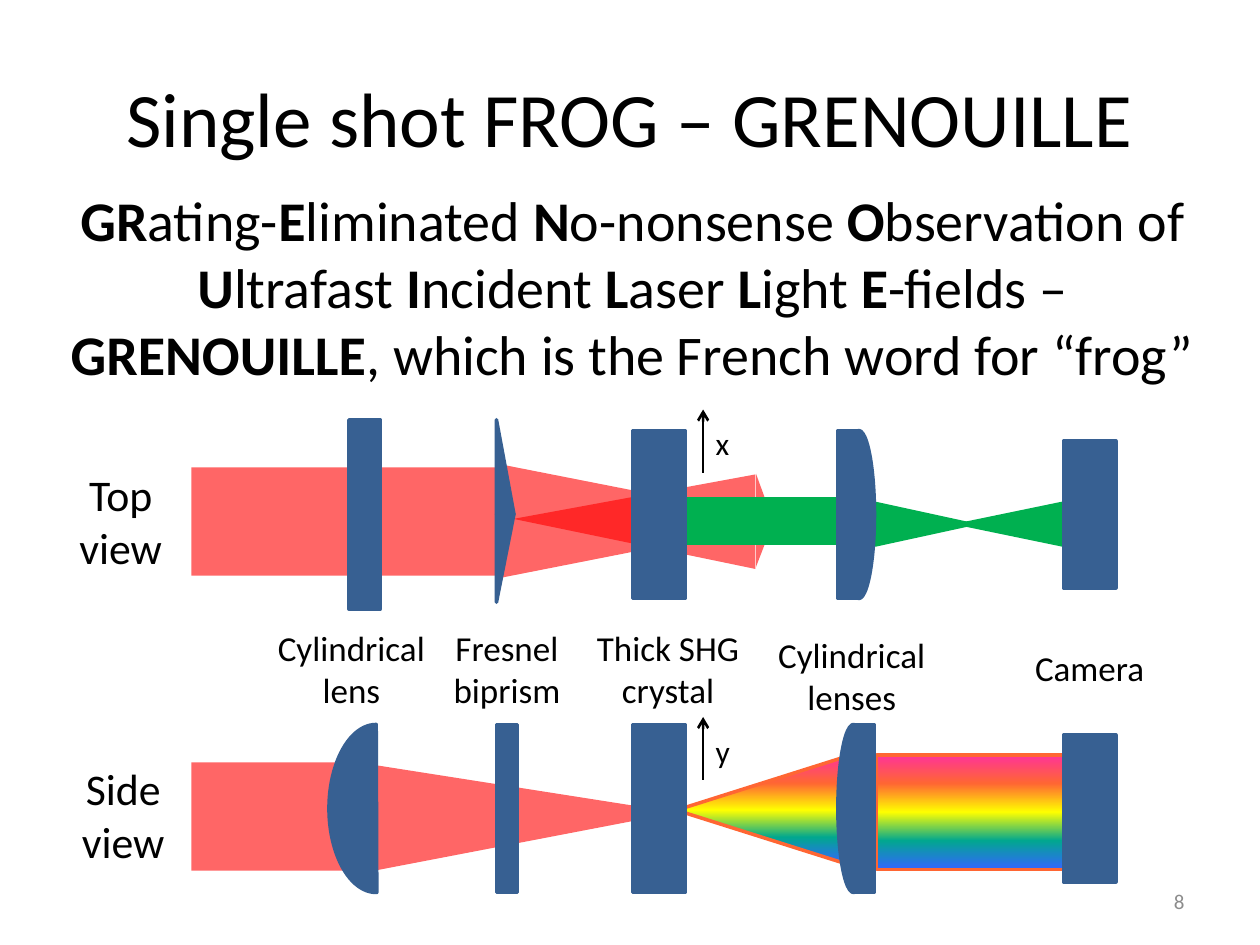
import pptx
import pptx.dml.color
import pptx.enum.shapes
import pptx.enum.text
import pptx.oxml
import pptx.oxml.ns
import pptx.util
from lxml import etree

Pt = pptx.util.Pt
RGBColor = pptx.dml.color.RGBColor
Shape = pptx.enum.shapes.MSO_SHAPE
Align = pptx.enum.text.PP_ALIGN
Anchor = pptx.enum.text.MSO_ANCHOR
qn = pptx.oxml.ns.qn

RED = RGBColor(0xFF, 0x00, 0x00)
GREEN = RGBColor(0x00, 0xB0, 0x50)
STEEL = RGBColor(0x37, 0x60, 0x92)
ORANGE = RGBColor(0xFF, 0x66, 0x33)
BLACK = RGBColor(0x00, 0x00, 0x00)
GRAY = RGBColor(0x8C, 0x8C, 0x8C)
SPECTRUM = (RGBColor(0xFF, 0x33, 0x99), ORANGE, RGBColor(0xFF, 0xFF, 0x00),
            RGBColor(0x01, 0xA7, 0x8F), RGBColor(0x33, 0x66, 0xFF))

TOP, SIDE = 246, 414          # upper edge of the crystal in each view
OPTIC_HEIGHT = 96
BEAM_LEFT, PRISM_X, CRYSTAL_X, LENS_X, CAMERA_X = 109.4, 283.7, 361.5, 478.8, 607.7
CRYSTAL_WIDTH = CAMERA_WIDTH = 30
LABEL_Y = 354.2

MEANING = (("GR", "ating-"), ("E", "liminated "), ("N", "o-nonsense "),
           ("O", "bservation of "), ("U", "ltrafast "), ("I", "ncident "),
           ("L", "aser "), ("L", "ight "), ("E", "-fields – "),
           ("GRENOUILLE", ", which is the French word for “frog”"))


def add_solid(page, kind, frame, color, outline=None, turn=0, adjust=(), flip=False):
    shape = page.shapes.add_shape(kind, *map(Pt, frame))
    shape.shadow.inherit = False
    shape.rotation = turn
    for index, value in enumerate(adjust):
        shape.adjustments[index] = value
    if flip:
        shape._element.spPr.find(qn("a:xfrm")).set("flipV", "1")
    shape.fill.solid()
    shape.fill.fore_color.rgb = color
    if outline is None:
        shape.line.fill.background()
    else:
        shape.line.color.rgb = outline
        shape.line.width = Pt(2)
    return shape


def add_red_beam(page, kind, frame, **options):
    """Red light at 60 % opacity, so crossing beams darken."""
    shape = add_solid(page, kind, frame, RED, **options)
    color = shape._element.spPr.find(qn("a:solidFill"))[0]
    etree.SubElement(color, qn("a:alpha")).set("val", "60000")


def add_green_beam(page, kind, frame, turn=0):
    add_solid(page, kind, frame, GREEN, GREEN, turn)


def add_optic(page, kind, frame, **options):
    add_solid(page, kind, frame, STEEL, STEEL, **options)


def add_half_lens(page, frame, turn=0):
    """Half ellipse, cut along the vertical through its centre."""
    add_optic(page, Shape.CHORD, frame, turn=turn, adjust=(53.75, 162))


def add_spectrum(page, kind, frame, angle, turn=0):
    shape = add_solid(page, kind, frame, ORANGE, ORANGE, turn)
    properties = shape._element.spPr
    gradient = etree.Element(qn("a:gradFill"), rotWithShape="1")
    stops = etree.SubElement(gradient, qn("a:gsLst"))
    for index, color in enumerate(SPECTRUM):
        stop = etree.SubElement(stops, qn("a:gs"), pos=str(index * 25000))
        etree.SubElement(stop, qn("a:srgbClr"), val=str(color))
    etree.SubElement(gradient, qn("a:lin"), ang=str(angle * 60000), scaled="0")
    properties.replace(properties.find(qn("a:solidFill")), gradient)


def add_text(page, frame, spans, size, align=Align.CENTER, anchor=Anchor.TOP, color=BLACK):
    """One paragraph from (wording, bold) spans."""
    box = page.shapes.add_textbox(*map(Pt, frame))
    box.text_frame.word_wrap = True
    box.text_frame.vertical_anchor = anchor
    para = box.text_frame.paragraphs[0]
    para.alignment = align
    for wording, bold in spans:
        span = para.add_run()
        span.text = wording
        span.font.name = "Calibri"
        span.font.size = Pt(size)
        span.font.bold = bold
        span.font.color.rgb = color


def add_axis(page, name, top):
    x = 401.8
    arrow = page.shapes.add_connector(
        pptx.enum.shapes.MSO_CONNECTOR.STRAIGHT, Pt(x), Pt(top + 36), Pt(x), Pt(top))
    arrow.line.color.rgb = BLACK
    arrow.line.width = Pt(1.5)
    etree.SubElement(arrow.line._get_or_add_ln(), qn("a:tailEnd"), type="arrow")
    etree.SubElement(arrow._element.spPr, qn("a:effectLst"))
    add_text(page, (x, top + 5, 18, 28.8), [(name, False)], 18, Align.LEFT)


def add_beams_behind(page):
    triangle, process = Shape.ISOSCELES_TRIANGLE, Shape.FLOWCHART_PROCESS
    add_red_beam(page, triangle, (335.5, 229, 54, 138.2), turn=270, adjust=(0.53,))
    add_spectrum(page, process, (501, 431.3, 108, 65.5), 90)
    add_spectrum(page, triangle, (404.6, 414, 61.9, 97.9), 180, turn=270)
    add_green_beam(page, triangle, (566.6, 270.7, 23.8, 57.6), 270)
    add_green_beam(page, triangle, (515.5, 272.2, 23.8, 54.7), 90)
    add_red_beam(page, triangle, (334.8, 214.6, 65.5, 166.3), turn=90)
    add_red_beam(page, triangle, (271.4, 381.6, 59.8, 171.4), turn=90, adjust=(0.45,))
    add_red_beam(page, process, (BEAM_LEFT, 435.6, 90, 61.9))


def add_side_view(page):
    add_half_lens(page, (188, SIDE, 54, OPTIC_HEIGHT))
    for x, width in ((PRISM_X, 12), (CRYSTAL_X, CRYSTAL_WIDTH), (487.4, 12)):
        add_optic(page, Shape.RECTANGLE, (x, SIDE, width, OPTIC_HEIGHT))
    add_half_lens(page, (LENS_X, SIDE, 18, OPTIC_HEIGHT))
    add_axis(page, "y", 409.7)


def add_top_view(page):
    add_half_lens(page, (481.7, TOP, 18, OPTIC_HEIGHT), turn=180)
    add_red_beam(page, Shape.FLOWCHART_PROCESS, (BEAM_LEFT, 267.1, 174.2, 61.9))
    add_optic(page, Shape.RECTANGLE, (199.4, 240, 18, 108))
    add_optic(page, Shape.RIGHT_TRIANGLE, (PRISM_X, 293.8, 10, 50.4), flip=True)
    add_optic(page, Shape.RIGHT_TRIANGLE, (PRISM_X, 239.8, 10, 54))
    add_axis(page, "x", 234)
    add_red_beam(page, Shape.RIGHT_TRIANGLE, (432, 270.7, 10, 27.4))
    add_red_beam(page, Shape.RIGHT_TRIANGLE, (432, 298.1, 10, 25.9), flip=True)
    add_green_beam(page, Shape.RECTANGLE, (391.7, 285.1, 87.1, 25.2))
    for x, width in ((CRYSTAL_X, CRYSTAL_WIDTH), (LENS_X, 12)):
        add_optic(page, Shape.RECTANGLE, (x, TOP, width, OPTIC_HEIGHT))


def add_labels(page):
    for wording, frame, size in (
            ("Top view", (36, 264, 66, 67.7), 25),
            ("Side view", (37.4, 432, 66, 67.7), 25),
            ("Cylindrical lens", (148.3, LABEL_Y, 105, 55.4), 20),
            ("Fresnel biprism", (246.2, LABEL_Y, 87, 55.4), 20),
            ("Thick SHG crystal", (331.2, LABEL_Y, 101, 55.4), 20),
            ("Cylindrical lenses", (434.2, 358.6, 105, 55.4), 20),
            ("Camera", (570.2, 365.8, 105, 31.7), 20)):
        add_text(page, frame, [(wording, False)], size)


def main():
    deck = pptx.Presentation()
    deck.slide_width, deck.slide_height = Pt(720), Pt(540)
    page = deck.slides.add_slide(deck.slide_layouts[6])
    add_beams_behind(page)
    add_text(page, (36, 21.6, 648, 90), [("Single shot FROG – GRENOUILLE", False)],
             44, anchor=Anchor.MIDDLE)
    spans = [(part, index == 0) for pair in MEANING for index, part in enumerate(pair)]
    add_text(page, (19.4, 102.2, 684, 126), spans, 32)
    add_side_view(page)
    for view in (TOP, SIDE):
        add_optic(page, Shape.RECTANGLE, (CAMERA_X, view + 6, CAMERA_WIDTH, 84))
    add_top_view(page)
    add_labels(page)
    add_text(page, (516.2, 500.4, 167.8, 28.8), [("8", False)], 12,
             Align.RIGHT, Anchor.MIDDLE, GRAY)
    deck.save("out.pptx")


if __name__ == "__main__":
    main()
